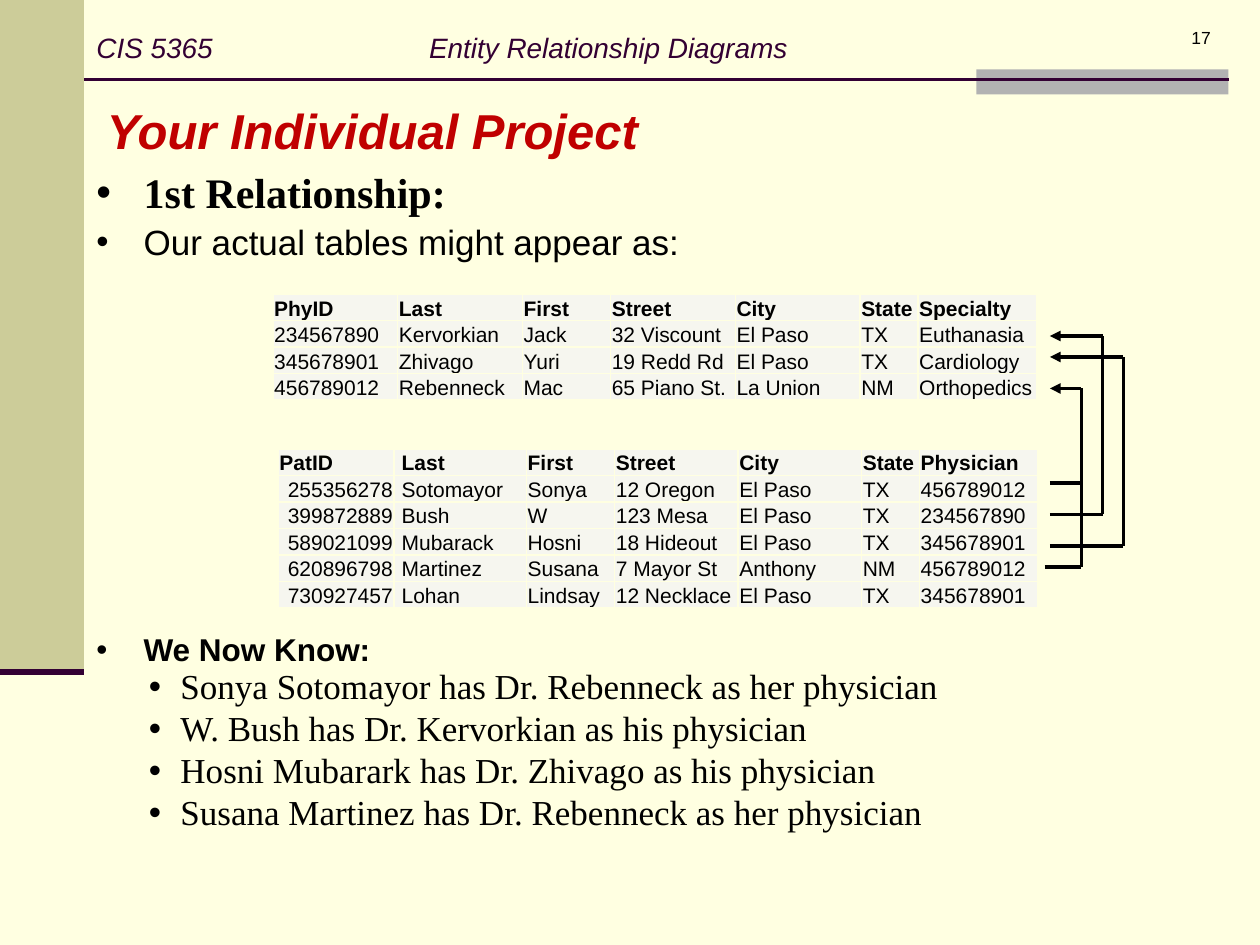
from dataclasses import dataclass

from pptx import Presentation
from pptx.dml.color import RGBColor as Rgb
from pptx.enum.shapes import MSO_CONNECTOR as Connector, MSO_SHAPE as Preset
from pptx.enum.text import MSO_ANCHOR as Anchor, PP_ALIGN as Align
from pptx.oxml.ns import qn
from pptx.util import Inches, Pt
from lxml.etree import SubElement


@dataclass(frozen=True)
class Theme:
    paper: str = "FFFFE1"
    band: str = "CCCC99"
    tab: str = "B2B2B2"
    plum: str = "330033"
    red: str = "C00000"
    ink: str = "000000"
    cell: str = "F6F6EF"
    sans: str = "Arial"
    serif: str = "Times New Roman"
    title: int = 28
    lead: int = 24
    body: int = 20
    know: int = 18
    header: int = 16
    table: int = 12
    number: int = 10


THEME = Theme()
COLUMNS, ROWS = 120, 90
TABLE_ROW = 2.52

PHYSICIANS = [
    ["PhyID", "Last", "First", "Street", "City", "State", "Specialty"],
    ["234567890", "Kervorkian", "Jack", "32 Viscount", "El Paso", "TX", "Euthanasia"],
    ["345678901", "Zhivago", "Yuri", "19 Redd Rd", "El Paso", "TX", "Cardiology"],
    ["456789012", "Rebenneck", "Mac", "65 Piano St.", "La Union", "NM", "Orthopedics"],
]
PATIENTS = [
    ["PatID", "Last", "First", "Street", "City", "State", "Physician"],
    ["255356278", "Sotomayor", "Sonya", "12 Oregon", "El Paso", "TX", "456789012"],
    ["399872889", "Bush", "W", "123 Mesa", "El Paso", "TX", "234567890"],
    ["589021099", "Mubarack", "Hosni", "18 Hideout", "El Paso", "TX", "345678901"],
    ["620896798", "Martinez", "Susana", "7 Mayor St", "Anthony", "NM", "456789012"],
    ["730927457", "Lohan", "Lindsay", "12 Necklace", "El Paso", "TX", "345678901"],
]
FINDINGS = [
    "Sonya Sotomayor has Dr. Rebenneck as her physician",
    "W. Bush has Dr. Kervorkian as his physician",
    "Hosni Mubarark has Dr. Zhivago as his physician",
    "Susana Martinez has Dr. Rebenneck as her physician",
]


def grid(count):
    return Inches(count / 12)


def add_block(page, box, color):
    block = page.shapes.add_shape(Preset.RECTANGLE, *map(grid, box))
    block.shadow.inherit = False
    block.fill.solid()
    block.fill.fore_color.rgb = Rgb.from_string(color)
    block.line.fill.background()


def add_line(page, start, end, color, width, arrow=False):
    line = page.shapes.add_connector(Connector.STRAIGHT, *map(grid, (*start, *end)))
    line.line.color.rgb = Rgb.from_string(color)
    line.line.width = Pt(width)
    if arrow:
        SubElement(line.line._get_or_add_ln(), qn("a:headEnd"), type="triangle")
    SubElement(line._element.spPr, qn("a:effectLst"))


def style(para, size, color=THEME.ink, font=THEME.sans, bold=False, italic=False):
    for span in para.runs:
        span.font.size = Pt(size)
        span.font.name = font
        span.font.color.rgb = Rgb.from_string(color)
        span.font.bold = bold
        span.font.italic = italic


def add_text(page, box, text, size, **look):
    frame = page.shapes.add_textbox(*map(grid, box)).text_frame
    frame.word_wrap = True
    frame.text = text
    para = frame.paragraphs[0]
    style(para, size, **look)
    return frame, para


def add_bullet(page, box, text, size, indent, **look):
    _, para = add_text(page, box, text, size, **look)
    para.line_spacing = 0.85
    settings = para._p.get_or_add_pPr()
    settings.set("marL", str(grid(indent)))
    settings.set("indent", str(-grid(indent)))
    SubElement(settings, qn("a:buFont"), typeface=THEME.sans)
    SubElement(settings, qn("a:buChar"), char="•")


def add_frame(page, box):
    left, top, width, height = box
    add_block(page, (left, top, 8, 64), THEME.band)
    add_block(page, (left + 93, top + 6.6, 24, 2.4), THEME.tab)
    add_line(page, (left + 8, top + 7.56), (left + 117, top + 7.56), THEME.plum, 1.5)
    add_line(page, (left, top + 64), (left + 8, top + 64), THEME.plum, 3.5)
    add_text(page, (left + 9, top + 9, 63, 6.8), "Your Individual Project",
             THEME.title, color=THEME.red, bold=True, italic=True)
    _, number = add_text(page, (left + 91.5, top + 2, 25, 6), "17", THEME.number)
    number.alignment = Align.RIGHT
    header, para = add_text(page, (left + 8, top - 3, 110, 15),
                            "CIS 5365\tEntity Relationship Diagrams",
                            THEME.header, color=THEME.plum, italic=True)
    header.vertical_anchor = Anchor.MIDDLE
    stops = SubElement(para._p.get_or_add_pPr(), qn("a:tabLst"))
    SubElement(stops, qn("a:tab"), pos=str(Inches(2.64)), algn="l")


def add_intro(page, box):
    left, top, width, height = box
    add_bullet(page, (left, top, width, 5.25), "1st Relationship:",
               THEME.lead, 4.5, font=THEME.serif, bold=True)
    add_bullet(page, (left, top + 5, width, 4.7),
               "Our actual tables might appear as:", THEME.body, 4.5)


def add_border(cell):
    settings = cell._tc.get_or_add_tcPr()
    for side in ("lnL", "lnR", "lnT", "lnB"):
        edge = SubElement(settings, qn(f"a:{side}"), w=str(Pt(1)))
        fill = SubElement(edge, qn("a:solidFill"))
        SubElement(fill, qn("a:srgbClr"), val=THEME.paper)


def add_records(page, box, records, widths, right_ids=False):
    table = page.shapes.add_table(len(records), len(widths), *map(grid, box)).table
    table.first_row = table.horz_banding = False
    for column, width in zip(table.columns, widths):
        column.width = Inches(width)
    for row_index, record in enumerate(records):
        table.rows[row_index].height = grid(box[3] / len(records))
        for column_index, value in enumerate(record):
            cell = table.cell(row_index, column_index)
            shifted = right_ids and column_index == 1
            cell.margin_left = Inches(0.06 if shifted else 0.01)
            cell.margin_right = cell.margin_top = Inches(0.01)
            cell.margin_bottom = 0
            cell.vertical_anchor = Anchor.BOTTOM
            add_border(cell)
            cell.fill.solid()
            cell.fill.fore_color.rgb = Rgb.from_string(THEME.cell)
            cell.text = value
            para = cell.text_frame.paragraphs[0]
            style(para, THEME.table, bold=row_index == 0)
            if right_ids and row_index and column_index == 0:
                para.alignment = Align.RIGHT


def add_links(page, box):
    left, top, width, height = box
    links = [(0, 14, 3, 5, True), (0, 17, 5, 0, True),
             (0, 20, 7, 2, True), (-0.5, 22, 3, 9.5, False)]
    for start, patient, lane, physician, arrow in links:
        low, high = (left + lane, top + patient), (left + lane, top + physician)
        add_line(page, (left + start, top + patient), low, THEME.ink, 2)
        add_line(page, low, high, THEME.ink, 2)
        if arrow:
            add_line(page, (left, top + physician), high, THEME.ink, 2, arrow=True)


def add_findings(page, box):
    left, top, width, height = box
    add_bullet(page, (left, top, 53, 4.3), "We Now Know:", THEME.know, 4.5, bold=True)
    for index, finding in enumerate(FINDINGS):
        add_bullet(page, (left + 5, top + 3.35 + 4 * index, width - 5, 4.7),
                   finding, THEME.body, 3, font=THEME.serif)


def main():
    deck = Presentation()
    deck.slide_width, deck.slide_height = grid(COLUMNS), grid(ROWS)
    page = deck.slides.add_slide(deck.slide_layouts[6])
    page.background.fill.solid()
    page.background.fill.fore_color.rgb = Rgb.from_string(THEME.paper)
    add_frame(page, (0, 0, COLUMNS, ROWS))
    add_intro(page, (8, 16, 111, 10))
    add_records(page, (26, 28, 72.7, TABLE_ROW * len(PHYSICIANS)), PHYSICIANS,
                [0.99, 0.99, 0.7, 0.99, 0.99, 0.46, 0.94])
    add_records(page, (26.5, 42.75, 72.5, TABLE_ROW * len(PATIENTS)), PATIENTS,
                [0.92, 1.05, 0.7, 0.98, 0.98, 0.46, 0.94], right_ids=True)
    add_links(page, (100, 32, 7, 22))
    add_findings(page, (8, 60, 92, 20))
    deck.save("out.pptx")


if __name__ == "__main__":
    main()
